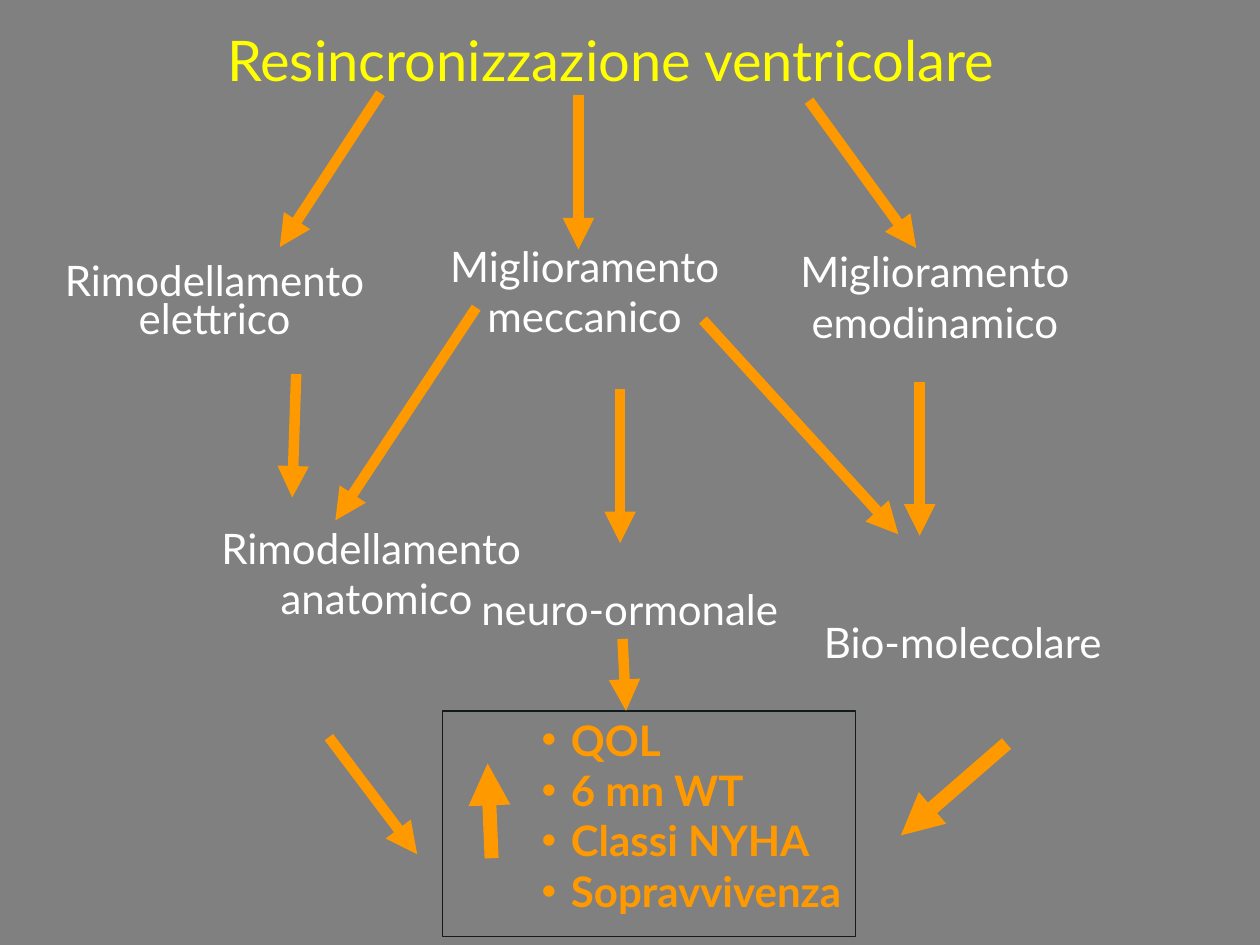
from dataclasses import dataclass

from lxml.etree import SubElement
from pptx import Presentation
from pptx.dml.color import RGBColor
from pptx.enum.shapes import MSO_CONNECTOR, MSO_SHAPE
from pptx.enum.text import MSO_ANCHOR, PP_ALIGN
from pptx.oxml.ns import qn
from pptx.util import Cm, Pt

FONT = "Lato"
GREY = "808080"
YELLOW = "FFFF00"
WHITE = "FFFFFF"
ORANGE = "FF9900"
DARK = "121B1C"


@dataclass(frozen=True)
class Box:
    left: float
    top: float
    width: float
    height: float

    def lengths(self) -> tuple:
        return Cm(self.left), Cm(self.top), Cm(self.width), Cm(self.height)


@dataclass(frozen=True)
class Label:
    lines: tuple[str, ...]
    box: Box
    spacing: float = 1.0


@dataclass(frozen=True)
class Arrow:
    start: tuple[float, float]
    end: tuple[float, float]
    weight: float = 6


LABELS = (
    Label(("Rimodellamento ", "elettrico"), Box(0.97, 5, 6.71, 1.98), spacing=0.75),
    Label(("Miglioramento meccanico",), Box(7.77, 4.72, 8.03, 2.29)),
    Label(("Miglioramento emodinamico",), Box(14.83, 4.83, 8.03, 2.29)),
    Label(("Rimodellamento ", "anatomico"), Box(3.79, 10.41, 7.6, 2.29)),
    Label(("neuro-ormonale",), Box(9.09, 11.63, 7.21, 1.27)),
)

ARROWS = (
    Arrow((7.67, 1.88), (5.64, 4.98)),
    Arrow((11.66, 1.91), (11.66, 5.03)),
    Arrow((16.31, 2.03), (18.47, 5)),
    Arrow((5.97, 7.54), (5.89, 10.03)),
    Arrow((9.6, 6.2), (6.76, 10.49)),
    Arrow((12.5, 7.85), (12.5, 10.95)),
    Arrow((14.17, 6.45), (18.11, 10.77)),
    Arrow((18.54, 7.7), (18.54, 10.8)),
    Arrow((6.63, 14.86), (8.41, 17.22)),
    Arrow((12.55, 12.88), (12.62, 14.33)),
    Arrow((20.29, 14.99), (18.16, 16.84), weight=8),
    Arrow((9.91, 17.3), (9.83, 15.39), weight=8),
)

OUTCOMES = ("QOL", "6 mn WT", "Classi NYHA", "Sopravvivenza")


def colour(value: str) -> RGBColor:
    return RGBColor.from_string(value)


def add_bullet(paragraph) -> None:
    properties = paragraph._p.get_or_add_pPr()
    properties.set("marL", str(Cm(0.59)))
    properties.set("indent", str(-Cm(0.59)))
    SubElement(properties, qn("a:buFont")).set("typeface", "Arial")
    SubElement(properties, qn("a:buChar")).set("char", "•")


def write_text(shape, lines, size=24, color=WHITE, bold=False, align=PP_ALIGN.CENTER,
               anchor=MSO_ANCHOR.TOP, spacing=1.0, bullets=False) -> None:
    frame = shape.text_frame
    frame.word_wrap = True
    frame.vertical_anchor = anchor
    for index, line in enumerate(lines):
        paragraph = frame.add_paragraph() if index else frame.paragraphs[0]
        if bullets:
            add_bullet(paragraph)
        paragraph.alignment = align
        paragraph.space_before = Pt(0)
        paragraph.line_spacing = spacing if index else 1.0
        run = paragraph.add_run()
        run.text = line
        run.font.name = FONT
        run.font.size = Pt(size)
        run.font.bold = bold
        run.font.color.rgb = colour(color)


def add_text(slide, box: Box, lines, **text_format) -> None:
    write_text(slide.shapes.add_textbox(*box.lengths()), lines, **text_format)


def add_title(slide, text: str, box: Box) -> None:
    title = slide.shapes.title
    title.left, title.top, title.width, title.height = box.lengths()
    write_text(title, (text,), size=32, color=YELLOW, anchor=MSO_ANCHOR.MIDDLE)


def add_arrow(slide, arrow: Arrow) -> None:
    points = (Cm(value) for value in (*arrow.start, *arrow.end))
    connector = slide.shapes.add_connector(MSO_CONNECTOR.STRAIGHT, *points)
    connector.line.color.rgb = colour(ORANGE)
    connector.line.width = Pt(arrow.weight)
    SubElement(connector.line._get_or_add_ln(), qn("a:tailEnd")).set("type", "triangle")
    SubElement(connector._element.spPr, qn("a:effectLst"))


def add_frame(slide, box: Box) -> None:
    frame = slide.shapes.add_shape(MSO_SHAPE.RECTANGLE, *box.lengths())
    frame.shadow.inherit = False
    frame.fill.background()
    frame.line.color.rgb = colour(DARK)
    frame.line.width = Pt(1)


def main() -> None:
    presentation = Presentation()
    presentation.slide_width = Cm(25.4)
    presentation.slide_height = Cm(19.05)
    slide = presentation.slides.add_slide(presentation.slide_layouts[5])
    slide.background.fill.solid()
    slide.background.fill.fore_color.rgb = colour(GREY)

    add_title(slide, "Resincronizzazione ventricolare", Box(4.32, 0.49, 16, 1.4))
    for label in LABELS:
        add_text(slide, label.box, label.lines, spacing=label.spacing)
    add_text(slide, Box(16.36, 12.37, 6.4, 1.12), ("Bio-molecolare",),
             align=PP_ALIGN.LEFT, anchor=MSO_ANCHOR.MIDDLE)
    add_frame(slide, Box(8.92, 14.33, 8.33, 4.55))
    add_text(slide, Box(10.67, 14.33, 6.58, 4.2), OUTCOMES, color=ORANGE, bold=True,
             align=PP_ALIGN.LEFT, anchor=MSO_ANCHOR.MIDDLE, bullets=True)
    for arrow in ARROWS:
        add_arrow(slide, arrow)

    presentation.save("out.pptx")


if __name__ == "__main__":
    main()
